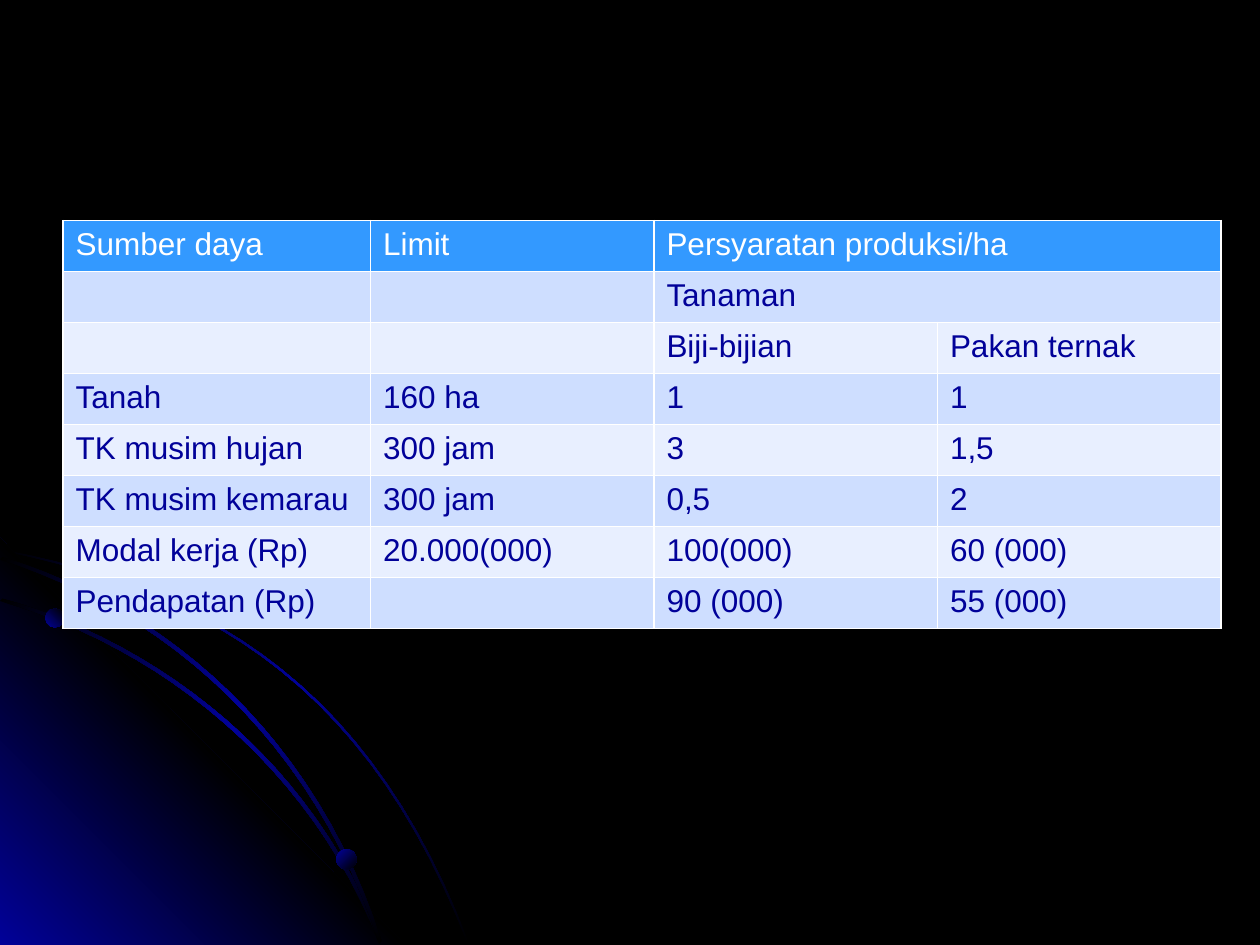
from copy import deepcopy

from lxml import etree
from pptx import Presentation
from pptx.dml.color import RGBColor
from pptx.enum.shapes import MSO_SHAPE
from pptx.oxml.ns import qn
from pptx.util import Inches, Pt

OVAL = MSO_SHAPE.OVAL
BLACK, NAVY, WHITE = "000000", "010199", "FFFFFF"
HEADER, BAND_DARK, BAND_LIGHT = "3399FF", "CEDEFF", "E8EFFF"
TO_UPPER_RIGHT, TO_LOWER_RIGHT = 45, 315
CURVE_STEPS = 24


def color(hex_value):
    return RGBColor.from_string(hex_value)


def paint_gradient(shape, colors, angle):
    """Spread the colours evenly along the angle, without line or shadow."""
    shape.shadow.inherit = False
    shape.line.fill.background()
    fill = shape.fill
    fill.gradient()
    fill.gradient_angle = angle
    stop_list = shape._element.spPr.find(".//" + qn("a:gsLst"))
    for _ in colors[2:]:
        stop_list.append(deepcopy(stop_list[0]))
    for i, (stop, hex_value) in enumerate(zip(fill.gradient_stops, colors)):
        stop.position = i / (len(colors) - 1)
        stop.color.rgb = color(hex_value)


prs = Presentation()
prs.slide_width, prs.slide_height = Inches(10), Inches(7.5)
slide = prs.slides.add_slide(prs.slide_layouts[6])
slide.background.fill.solid()
slide.background.fill.fore_color.rgb = color(BLACK)

# Each arc is a cubic Bezier curve: start, two control points, end, band width
outer_arc = [(0, 4.37), (1.75, 4.71), (2.96, 5.54), (3.71, 7.49), 0.01]
inner_arc = [(0, 4.77), (1.28, 5.14), (2.47, 6.08), (3.01, 7.49), 0.02]
middle_arc = [(0, 4.44), (1.33, 4.86), (2.49, 5.88), (3.01, 7.49), 0.02]

arc_outlines = []
for start, control_1, control_2, end, width in [outer_arc, inner_arc, middle_arc]:
    lower_edge = []
    for step in range(CURVE_STEPS + 1):
        t = step / CURVE_STEPS
        weights = [(1 - t) ** 3, 3 * t * (1 - t) ** 2, 3 * t ** 2 * (1 - t), t ** 3]
        lower_edge.append([
            sum(w * value for w, value in zip(weights, axis))
            for axis in zip(start, control_1, control_2, end)])
    # The upper edge is the same curve, moved up and right, and run backwards
    upper_edge = [(x + width, y - width) for x, y in reversed(lower_edge)]
    arc_outlines.append(lower_edge + upper_edge)

# Arcs and corner glow, from back to front
corner_glow = [(3.22, 7.5), (0, 7.5), (0, 4.27)]
decorations = [
    (outline, [BLACK, NAVY, BLACK], TO_LOWER_RIGHT) for outline in arc_outlines]
decorations.insert(1, (corner_glow, [NAVY, BLACK, NAVY], TO_UPPER_RIGHT))
for outline, colors, angle in decorations:
    points = [(Inches(x), Inches(y)) for x, y in outline]
    builder = slide.shapes.build_freeform(*points[0])
    builder.add_line_segments(points[1:], close=True)
    paint_gradient(builder.convert_to_shape(), colors, angle)

# Dots on the arcs
for left, top, size, angle in [
        (0.36, 4.83, 0.15, TO_UPPER_RIGHT), (2.67, 6.74, 0.16, TO_LOWER_RIGHT)]:
    dot = slide.shapes.add_shape(
        OVAL, Inches(left), Inches(top), Inches(size), Inches(size))
    paint_gradient(dot, [NAVY, BLACK], angle)

# Resource table: two header rows span the two crop columns
rows = [
    ["Sumber daya", "Limit", "Persyaratan produksi/ha", ""],
    ["", "", "Tanaman", ""],
    ["", "", "Biji-bijian", "Pakan ternak"],
    ["Tanah", "160 ha", "1", "1"],
    ["TK musim hujan", "300 jam", "3", "1,5"],
    ["TK musim kemarau", "300 jam", "0,5", "2"],
    ["Modal kerja (Rp)", "20.000(000)", "100(000)", "60 (000)"],
    ["Pendapatan (Rp)", "", "90 (000)", "55 (000)"],
]
column_widths = [2.44, 2.25, 2.25, 2.25]
resources = slide.shapes.add_table(
    len(rows), len(column_widths), Inches(0.5), Inches(1.75),
    Inches(sum(column_widths)), Inches(3.24)).table
for column, width in zip(resources.columns, column_widths):
    column.width = Inches(width)
for r in (0, 1):
    resources.cell(r, 2).merge(resources.cell(r, 3))

font_format = {"name": "Arial", "size": Pt(18), "bold": False}
for r, row in enumerate(rows):
    band = HEADER if r == 0 else BAND_DARK if r % 2 else BAND_LIGHT
    for c, text in enumerate(row):
        cell = resources.cell(r, c)
        paragraph = cell.text_frame.paragraphs[0]
        if text:
            paragraph.text = text
        for key, value in font_format.items():
            setattr(paragraph.font, key, value)
        paragraph.font.color.rgb = color(WHITE if r == 0 else NAVY)

        # Borders come before the fill in the cell properties
        cell_properties = cell._tc.get_or_add_tcPr()
        for side in ("lnL", "lnR", "lnT", "lnB"):
            border = etree.SubElement(
                cell_properties, qn("a:" + side), w=str(Pt(1)))
            solid = etree.SubElement(border, qn("a:solidFill"))
            etree.SubElement(solid, qn("a:srgbClr"), val=WHITE)
        cell.fill.solid()
        cell.fill.fore_color.rgb = color(band)

prs.save("out.pptx")
